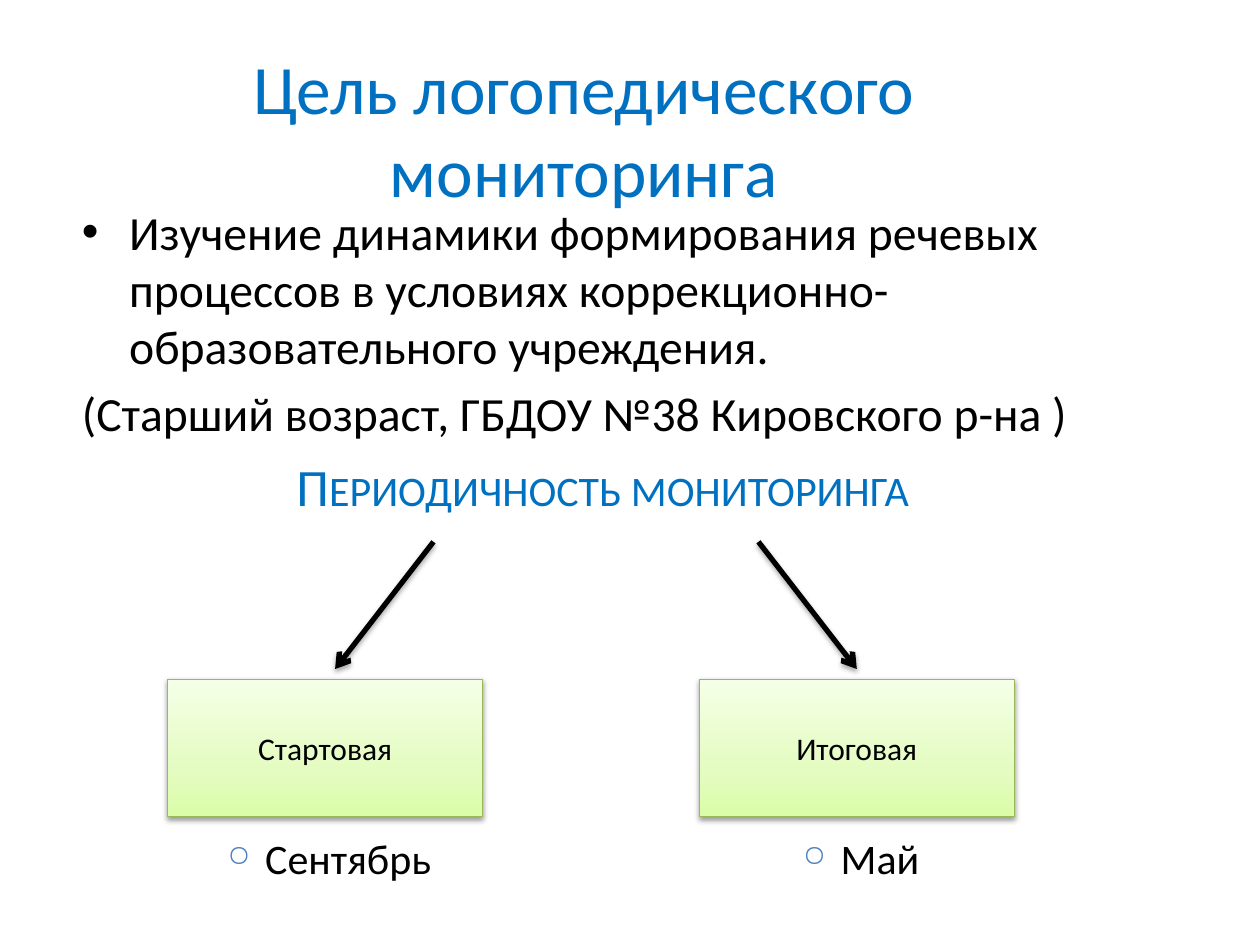
from lxml import etree
from pptx import Presentation
from pptx.dml.color import RGBColor
from pptx.enum.shapes import MSO_CONNECTOR, MSO_SHAPE
from pptx.enum.text import MSO_ANCHOR, MSO_AUTO_SIZE, PP_ALIGN
from pptx.oxml.ns import qn
from pptx.util import Pt

RECT, STRAIGHT = MSO_SHAPE.RECTANGLE, MSO_CONNECTOR.STRAIGHT
TOP, MIDDLE, BOTTOM = MSO_ANCHOR.TOP, MSO_ANCHOR.MIDDLE, MSO_ANCHOR.BOTTOM
LEFT, CENTER = PP_ALIGN.LEFT, PP_ALIGN.CENTER
NO_FIT = MSO_AUTO_SIZE.NONE


def rgb(color):
    return RGBColor.from_string(color)


def add(parent, tag, **attrs):
    """Append a DrawingML element with the given attributes."""
    el = etree.SubElement(parent, qn("a:" + tag))
    for key, value in attrs.items():
        el.set(key, str(value))
    return el


class Deck:
    font, blue, black = "Calibri", "0070C0", "000000"
    edge, bullet_blue = "98B955", "4F81BD"
    stops = [(0, "DAFDA7"), (35, "E4FCC2"), (100, "F5FFE7")]

    def __init__(self, width, height):
        self.prs = Presentation()
        self.prs.slide_width, self.prs.slide_height = Pt(width), Pt(height)
        self.s = self.prs.slides.add_slide(self.prs.slide_layouts[1])

    def place(self, sp, *box):
        for name, value in zip(("left", "top", "width", "height"), box):
            setattr(sp, name, Pt(value))

    def set_text(self, sp, lines, size, color=black, align=CENTER, anchor=TOP, before=0):
        tf = sp.text_frame
        for name, value in {"word_wrap": True, "auto_size": NO_FIT,
                            "vertical_anchor": anchor}.items():
            setattr(tf, name, value)
        for i, line in enumerate(lines):
            p = tf.paragraphs[0] if i == 0 else tf.add_paragraph()
            p.alignment, p.space_before = align, Pt(before)
            r = p.add_run()
            r.text = line
            for name, value in {"size": Pt(size), "name": self.font}.items():
                setattr(r.font, name, value)
            r.font.color.rgb = rgb(color)
        return tf.paragraphs

    def bullet(self, p, indent, char=None, color=None, percent=None):
        """Set a hanging indent and a bullet, or no bullet without char."""
        pPr = p._p.get_or_add_pPr()
        pPr.set("marL", str(Pt(indent)))
        pPr.set("indent", str(-Pt(indent)))
        if color:
            add(add(pPr, "buClr"), "srgbClr", val=color)
        if percent:
            add(pPr, "buSzPct", val=percent * 1000)
        if char:
            add(pPr, "buChar", char=char)
        else:
            add(pPr, "buNone")

    def shadow(self, sp, alpha, distance):
        effects = add(sp._element.spPr, "effectLst")
        outer = add(effects, "outerShdw", blurRad=Pt(3.1), dist=Pt(distance),
                    dir=90 * 60000, rotWithShape=0)
        add(add(outer, "srgbClr", val=self.black), "alpha", val=alpha * 1000)

    def title(self, text, *box):
        sp = self.s.shapes.title
        self.place(sp, *box)
        self.set_text(sp, [text], 39.6, self.blue, anchor=MIDDLE)

    def body(self, lines, chars, *box):
        sp = self.s.placeholders[1]
        self.place(sp, *box)
        paragraphs = self.set_text(sp, lines, 27.2, align=LEFT, before=5.4)
        for p, char in zip(paragraphs, chars):
            self.bullet(p, 27, char)

    def text_box(self, box):
        return self.s.shapes.add_textbox(*map(Pt, box))

    def caption(self, text, *box):
        paragraphs = self.set_text(self.text_box(box), [text], 30, self.blue, anchor=BOTTOM)
        paragraphs[0].runs[0]._r.get_or_add_rPr().set("cap", "small")

    def month(self, text, *box):
        paragraphs = self.set_text(self.text_box(box), [text], 24, before=6)
        self.bullet(paragraphs[0], 21.6, "○", self.bullet_blue, 70)

    def stage(self, text, *box):
        sp = self.s.shapes.add_shape(RECT, *map(Pt, box))
        sp.fill.gradient()
        sp.fill.gradient_angle = 90
        stop_list = sp._element.spPr.find(".//" + qn("a:gsLst"))
        stop_list.clear()
        for position, color in self.stops:
            add(add(stop_list, "gs", pos=position * 1000), "srgbClr", val=color)
        sp.line.color.rgb, sp.line.width = rgb(self.edge), Pt(0.75)
        self.shadow(sp, 38, 1.6)
        self.set_text(sp, [text], 18, anchor=MIDDLE)

    def arrow(self, *ends):
        c = self.s.shapes.add_connector(STRAIGHT, *map(Pt, ends))
        c.line.color.rgb, c.line.width = rgb(self.black), Pt(3)
        add(c._element.spPr.find(qn("a:ln")), "tailEnd", type="arrow")
        self.shadow(c, 35, 1.8)


def main():
    deck = Deck(720, 540)

    # Goal
    deck.title("Цель логопедического мониторинга", 39.6, 50.4, 588.2, 46)
    deck.body(["Изучение динамики формирования речевых процессов в условиях "
               "коррекционно-образовательного учреждения.",
               "(Старший возраст, ГБДОУ №38 Кировского р-на )"],
              ["•", None], 39.6, 112.3, 588.2, 140.4)

    # Frequency: two stages, each with an arrow and a month
    deck.caption("Периодичность мониторинга", 50.4, 253.4, 588.2, 45.4)
    stages = [("Стартовая", 95.8, 247.7, 191.5, "Сентябрь", 84.2, 208),
              ("Итоговая", 399.6, 433.4, 489.6, "Май", 421.9, 140.4)]
    for name, left, start, end, month, month_left, month_width in stages:
        deck.stage(name, left, 388.1, 180, 78.5)
        deck.arrow(start, 309.6, end, 382.3)
        deck.month(month, month_left, 472.3, month_width, 40)

    deck.prs.save("out.pptx")


if __name__ == "__main__":
    main()
